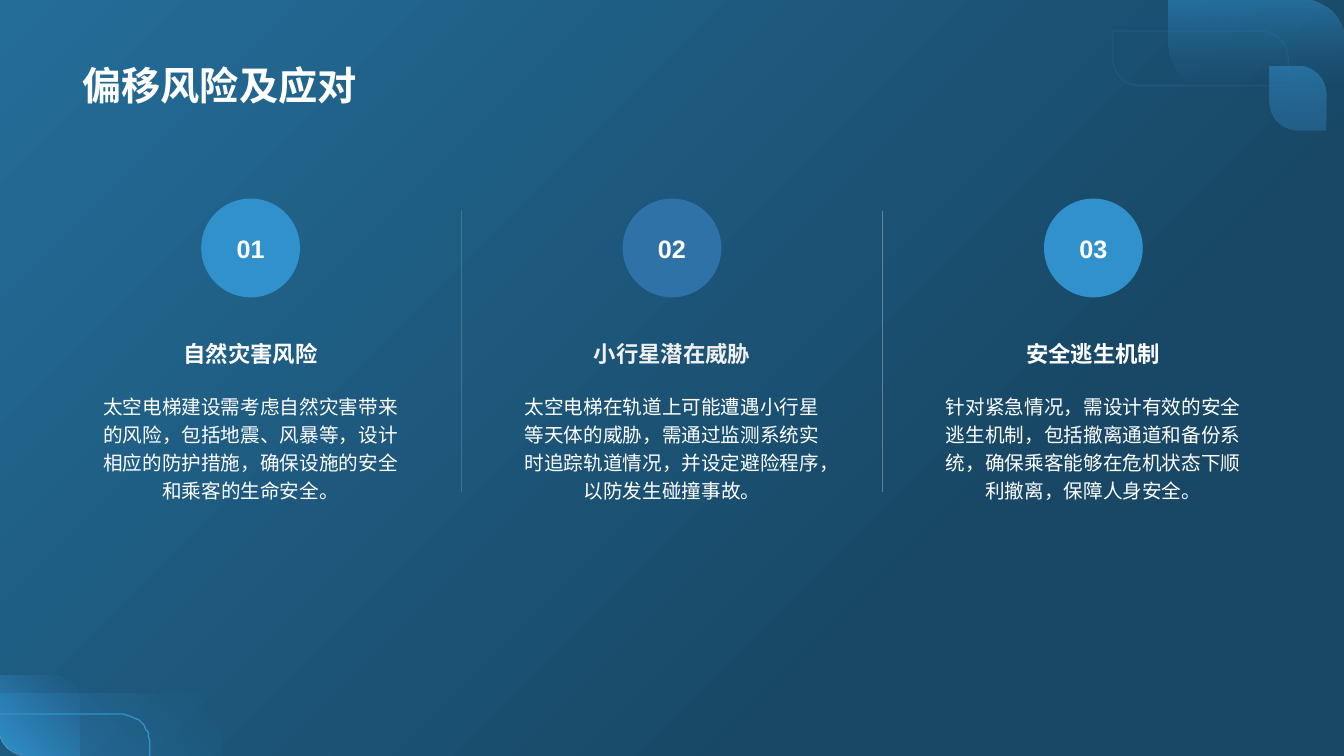
import pptx
import pptx.dml.color
import pptx.enum.shapes
import pptx.enum.text
import pptx.oxml.ns
import pptx.util
from lxml import etree

Pt = pptx.util.Pt
qn = pptx.oxml.ns.qn
SHAPE = pptx.enum.shapes.MSO_SHAPE
ANCHOR = pptx.enum.text.MSO_ANCHOR
ALIGN = pptx.enum.text.PP_ALIGN

COLORS = {
    "bg_light": "246D99",
    "bg_dark": "184866",
    "deep": "2F72A7",
    "bright": "3091CC",
    "white": "FFFFFF",
    "pale": "F0F0F0",
}
CJK = "Noto Sans CJK SC"
SLIDE_W, SLIDE_H = 960, 540
COLUMN_PITCH, COLUMN_W = 301, 228
CIRCLE = 70.56

RISKS = [
    ("01", "bright", "自然灾害风险", "white",
     "太空电梯建设需考虑自然灾害带来的风险，包括地震、风暴等，设计相应的防护措施，确保设施的安全和乘客的生命安全。"),
    ("02", "deep", "小行星潜在威胁", "pale",
     "太空电梯在轨道上可能遭遇小行星等天体的威胁，需通过监测系统实时追踪轨道情况，并设定避险程序，以防发生碰撞事故。"),
    ("03", "bright", "安全逃生机制", "white",
     "针对紧急情况，需设计有效的安全逃生机制，包括撤离通道和备份系统，确保乘客能够在危机状态下顺利撤离，保障人身安全。"),
]

# box, corner radius, opacity of the deep and bright ends, clockwise angle
PETALS = [
    ((-0.7, 482.4, 57.6, 57.6), 0.357, (0, 100), 135),
    ((-0.7, 495.4, 159, 44.6), 0.5, (0, 50), 135),
    ((835, 0, 125.3, 61.2), 0.5, (0, 50), 270),
    ((907, 47.2, 40.3, 46.1), 0.5, (50, 50), 270),
]


def rgb(name):
    return pptx.dml.color.RGBColor.from_string(COLORS[name])


def set_opacity(parent, percent):
    """Add an opacity to the first colour inside an XML element."""
    color = next(parent.iter(qn("a:srgbClr")))
    etree.SubElement(color, qn("a:alpha"), val=str(percent * 1000))


def set_gradient(fill, stops, angle):
    """Fill with two (colour, position) stops at a clockwise angle."""
    fill.gradient()
    fill.gradient_angle = 360 - angle
    for stop, (color, position) in zip(fill.gradient_stops, stops):
        stop.color.rgb = rgb(color)
        stop.position = position


def add_shape(slide, kind, box):
    sp = slide.shapes.add_shape(kind, *map(Pt, box))
    sp.shadow.inherit = False
    sp.line.fill.background()
    return sp


def add_petal(slide, box, radius):
    sp = add_shape(slide, SHAPE.ROUND_2_DIAG_RECTANGLE, box)
    sp.adjustments[0] = 0
    sp.adjustments[1] = radius
    return sp


def add_gradient_petal(slide, box, radius, opacities, angle):
    sp = add_petal(slide, box, radius)
    set_gradient(sp.fill, [("deep", 0), ("bright", 1)], angle)
    for gs, opacity in zip(sp.element.iter(qn("a:gs")), opacities):
        set_opacity(gs, opacity)


def add_outline_petal(slide, box):
    sp = add_petal(slide, box, 0.5)
    sp.fill.background()
    sp.line.color.rgb = rgb("deep")
    sp.line.width = Pt(1)
    set_opacity(sp.line._ln, 25)


def add_corner_curve(slide):
    """Open line along the bottom left corner with one rounded bend."""
    left, top, right, radius = -0.7, 509.8, 107.3, 22.3
    # Quarter circle as a cubic Bezier, sampled in even steps
    start, end = (right - radius, top), (right, top + radius)
    c1, c2 = (right - radius * 0.45, top), (right, top + radius * 0.45)
    bend = []
    for step in range(13):
        t = step / 12
        u = 1 - t
        weights = (u ** 3, 3 * u * u * t, 3 * u * t * t, t ** 3)
        bend.append(tuple(
            sum(w * pt[axis] for w, pt in zip(weights, (start, c1, c2, end)))
            for axis in (0, 1)))
    builder = slide.shapes.build_freeform(left, top, scale=float(Pt(1)))
    builder.add_line_segments(bend + [(right, SLIDE_H)], close=False)
    sp = builder.convert_to_shape()
    sp.shadow.inherit = False
    sp.fill.background()
    sp.line.color.rgb = rgb("bright")
    sp.line.width = Pt(1)


def add_divider(slide, x):
    line = slide.shapes.add_connector(
        pptx.enum.shapes.MSO_CONNECTOR.STRAIGHT,
        Pt(x), Pt(150.5), Pt(x), Pt(351.4))
    line.line.color.rgb = rgb("pale")
    line.line.width = Pt(0.25)
    set_opacity(line.line._ln, 50)
    etree.SubElement(line.element.spPr, qn("a:effectLst"))


def write(sp, text, size, color="white", bold=False, font=CJK,
          anchor=ANCHOR.TOP, align=ALIGN.CENTER, spacing=None):
    tf = sp.text_frame
    tf.word_wrap = True
    tf.vertical_anchor = anchor
    tf.text = text
    p = tf.paragraphs[0]
    p.alignment = align
    p.line_spacing = spacing
    r = p.runs[0]
    r.font.size = Pt(size)
    r.font.bold = bold
    r.font.name = font
    r.font.color.rgb = rgb(color)
    etree.SubElement(r.font._element, qn("a:ea"), typeface=font)


def add_text(slide, box, text, size, **style):
    write(slide.shapes.add_textbox(*map(Pt, box)), text, size, **style)


def add_risk(slide, center, number, circle_color, heading, heading_color, body):
    circle = add_shape(slide, SHAPE.OVAL,
                       (center - CIRCLE / 2, 141.84, CIRCLE, CIRCLE))
    circle.fill.solid()
    circle.fill.fore_color.rgb = rgb(circle_color)
    write(circle, number, 18, bold=True, font="Arial", anchor=ANCHOR.MIDDLE)
    left = center - COLUMN_W / 2
    add_text(slide, (left, 239, COLUMN_W, 26.6), heading, 16,
             color=heading_color, bold=True, anchor=ANCHOR.BOTTOM)
    add_text(slide, (left, 275, COLUMN_W, 88), body, 14, spacing=1.2)


def main():
    prs = pptx.Presentation()
    prs.slide_width, prs.slide_height = Pt(SLIDE_W), Pt(SLIDE_H)
    slide = prs.slides.add_slide(prs.slide_layouts[6])
    set_gradient(slide.background.fill,
                 [("bg_light", 0), ("bg_dark", 0.72)], 45)

    for petal in PETALS:
        add_gradient_petal(slide, *petal)
    add_outline_petal(slide, (794.9, 22.3, 125.3, 38.9))
    add_corner_curve(slide)

    for side in (-1, 1):
        add_divider(slide, SLIDE_W / 2 + side * COLUMN_PITCH / 2)
    for i, risk in enumerate(RISKS):
        add_risk(slide, SLIDE_W / 2 + (i - 1) * COLUMN_PITCH, *risk)
    add_text(slide, (51.84, 10.08, 855.36, 70.56), "偏移风险及应对", 28,
             bold=True, anchor=ANCHOR.BOTTOM, align=ALIGN.LEFT)

    prs.save("out.pptx")


if __name__ == "__main__":
    main()
